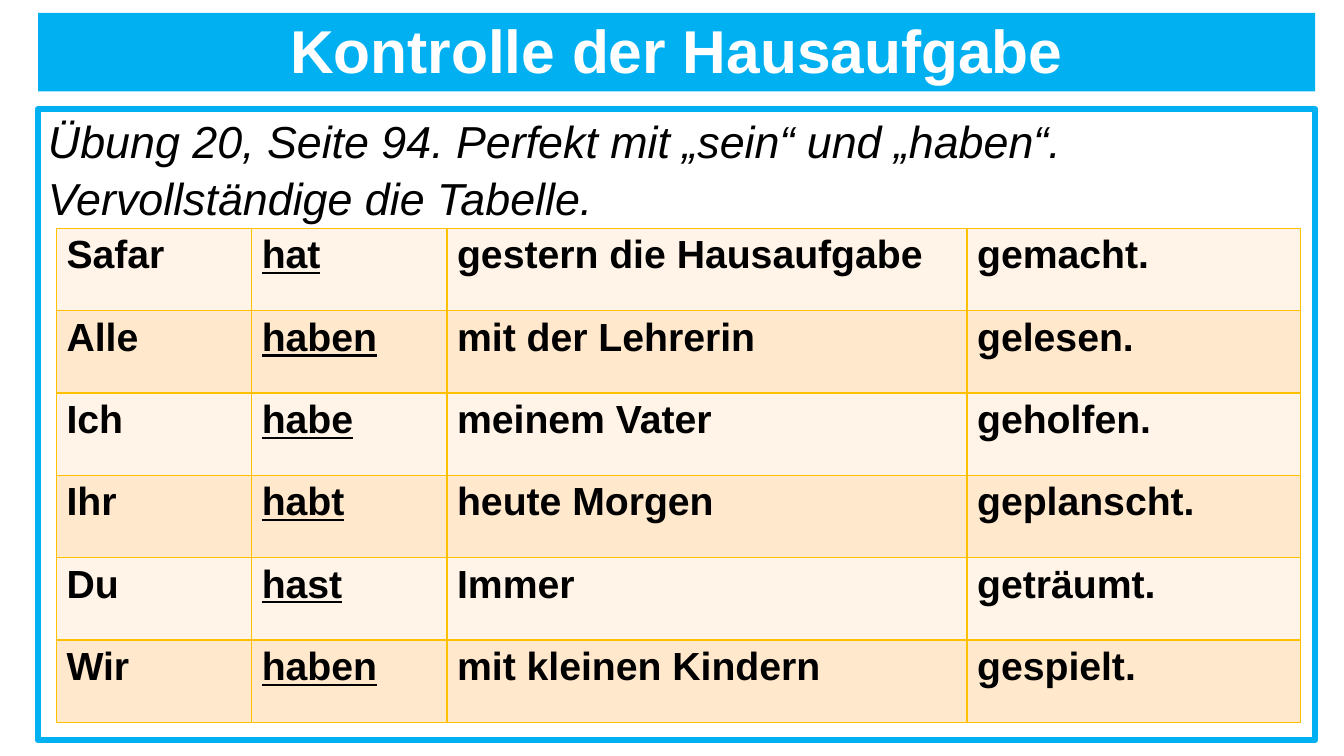
import lxml.etree
import pptx
import pptx.dml.color
import pptx.enum.shapes
import pptx.enum.text
import pptx.oxml.ns
import pptx.util

Pt = pptx.util.Pt
qn = pptx.oxml.ns.qn
ALIGN = pptx.enum.text.PP_ALIGN
ANCHOR = pptx.enum.text.MSO_ANCHOR

TITLE = "Kontrolle der Hausaufgabe"
TASK = [
    "Übung 20, Seite 94. Perfekt mit „sein“ und „haben“.",
    "Vervollständige die Tabelle.",
]
SENTENCES = [
    ("Safar", "hat", "gestern die Hausaufgabe", "gemacht."),
    ("Alle", "haben", "mit der Lehrerin", "gelesen."),
    ("Ich", "habe", "meinem Vater", "geholfen."),
    ("Ihr", "habt", "heute Morgen", "geplanscht."),
    ("Du", "hast", "Immer", "geträumt."),
    ("Wir", "haben", "mit kleinen Kindern", "gespielt."),
]
VERB_COLUMN = 1
COLUMN_WIDTHS = [139.5, 139.5, 371.5, 238]
ROW_HEIGHT = 58.8
BANDS = ["FFF4E7", "FFE8CC"]
BLUE, GOLD, BLACK, WHITE = "00B0F0", "FFC000", "000000", "FFFFFF"
LEFT, WIDTH = 27.2, 912.2


def color(value):
    return pptx.dml.color.RGBColor.from_string(value)


def style(para, size, ink, bold=False, italic=False):
    font = para.font
    font.name, font.size = "Arial", Pt(size)
    font.bold, font.italic = bold, italic
    font.color.rgb = color(ink)


def add_borders(cell, ink, width):
    properties = cell._tc.get_or_add_tcPr()
    for index, side in enumerate(("a:lnL", "a:lnR", "a:lnT", "a:lnB")):
        line = lxml.etree.Element(qn(side), w=str(Pt(width)))
        fill = lxml.etree.SubElement(line, qn("a:solidFill"))
        lxml.etree.SubElement(fill, qn("a:srgbClr"), val=ink)
        properties.insert(index, line)


def add_title(page):
    title = page.shapes.title
    title.left, title.top = Pt(LEFT), Pt(9.2)
    title.width, title.height = Pt(WIDTH), Pt(56)
    title.fill.solid()
    title.fill.fore_color.rgb = color(BLUE)
    frame = title.text_frame
    frame.text = TITLE
    frame.auto_size = pptx.enum.text.MSO_AUTO_SIZE.NONE
    frame.vertical_anchor = ANCHOR.BOTTOM
    para = frame.paragraphs[0]
    para.alignment, para.line_spacing = ALIGN.CENTER, 0.9
    style(para, 43.2, WHITE, bold=True)


def add_task(page):
    box = page.shapes.add_shape(
        pptx.enum.shapes.MSO_SHAPE.RECTANGLE, Pt(LEFT), Pt(78), Pt(WIDTH), Pt(450.7))
    box.shadow.inherit = False
    box.fill.background()
    box.line.color.rgb = color(BLUE)
    box.line.width = Pt(4.5)
    frame = box.text_frame
    frame.vertical_anchor = ANCHOR.TOP
    frame.text = "\n".join(TASK)
    for para in frame.paragraphs:
        para.alignment, para.space_before = ALIGN.LEFT, Pt(2)
        style(para, 32, BLACK, italic=True)


def add_sentences(page):
    table = page.shapes.add_table(
        len(SENTENCES), len(COLUMN_WIDTHS), Pt(40.3), Pt(163.2),
        Pt(sum(COLUMN_WIDTHS)), Pt(ROW_HEIGHT * len(SENTENCES))).table
    table.first_row = False
    for column, width in zip(table.columns, COLUMN_WIDTHS):
        column.width = Pt(width)
    for row, words in enumerate(SENTENCES):
        table.rows[row].height = Pt(ROW_HEIGHT)
        for column, word in enumerate(words):
            cell = table.cell(row, column)
            cell.text = word
            cell.fill.solid()
            cell.fill.fore_color.rgb = color(BANDS[row % 2])
            add_borders(cell, GOLD, 1)
            para = cell.text_frame.paragraphs[0]
            style(para, 28, BLACK, bold=True)
            para.font.underline = column == VERB_COLUMN


def main():
    deck = pptx.Presentation()
    deck.slide_width, deck.slide_height = Pt(960), Pt(540)
    page = deck.slides.add_slide(deck.slide_layouts.get_by_name("Title Only"))
    add_title(page)
    add_task(page)
    add_sentences(page)
    deck.save("out.pptx")


if __name__ == "__main__":
    main()
